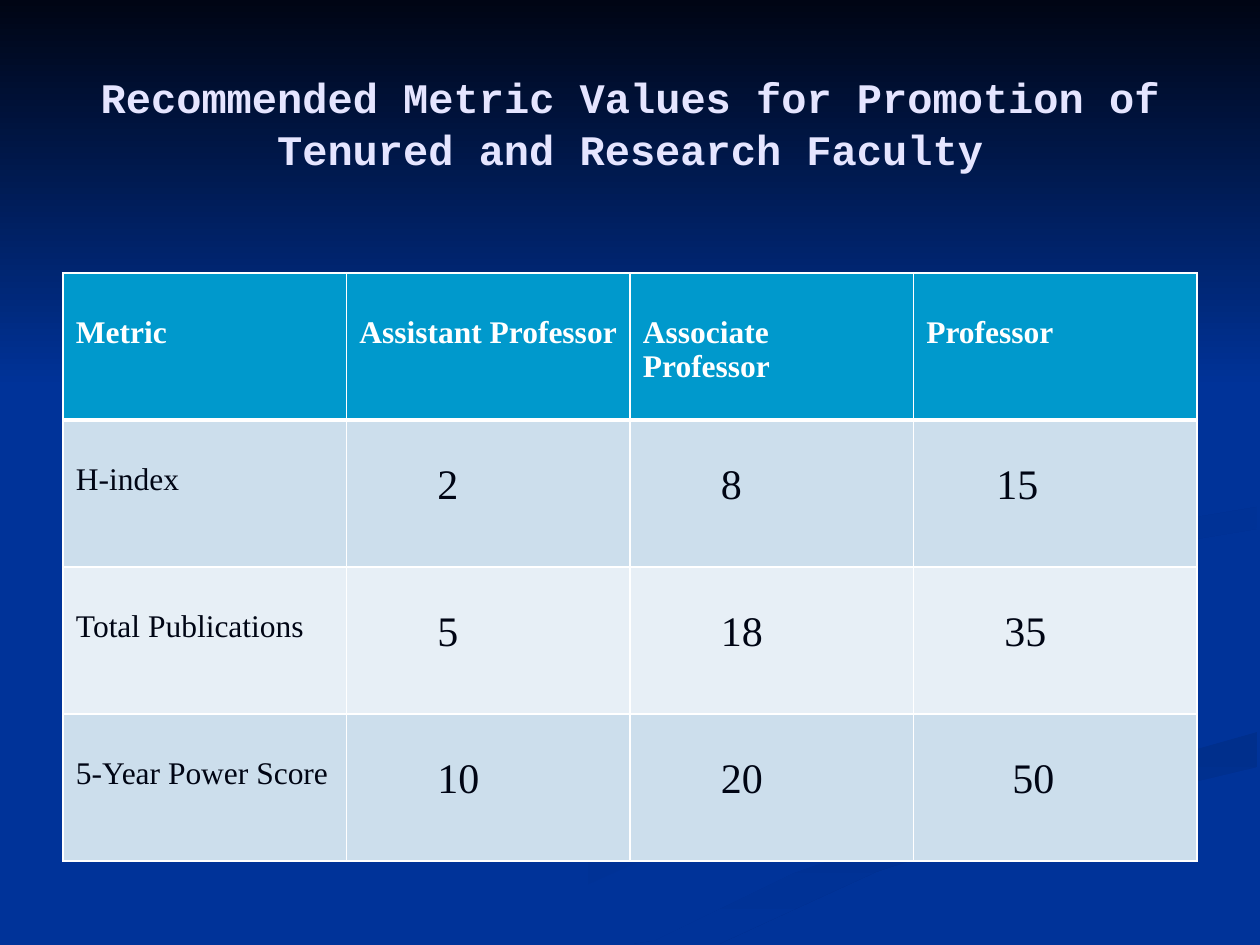
from lxml.etree import SubElement as Sub
from pptx import Presentation
from pptx.dml.color import RGBColor
from pptx.enum.text import MSO_ANCHOR as Anchor, PP_ALIGN as Align
from pptx.oxml.ns import qn
from pptx.util import Pt

PX = 914400 // 126
WIDE, HIGH = 1260, 945
WHITE, NAVY, BLUE = "FFFFFF", "000514", "003399"
TIMES = "Times New Roman"

# Curves shared by neighbouring swirls
EDGE = [(654, 941), (794, 873), (963, 815), (1257, 732)]
RIM = [(985, 580), (1071, 538), (1257, 507)]

# Backdrop, back to front: points, gradient start, gradient end, clockwise angle
SWIRLS = [
    ([(725, 578), (732, 610), (978, 697), (944, 748), (577, 849), (378, 944),
      (455, 944), (629, 866), (932, 779), (1008, 732), (939, 678),
      (740, 606)], BLUE, "003193", 0),
    ([(912, 585), (984, 653), (1143, 708), (1126, 762), (1188, 718),
      (939, 617)], BLUE, "003193", 45),
    ([(634, 944), (719, 944), (876, 872), (1034, 820), (1257, 767),
      *EDGE[::-1]], "002F8C", BLUE, 90),
    ([(914, 585), (956, 627), (1188, 718), (1148, 756), (835, 842),
      (601, 944), *EDGE, (1257, 678), (1029, 620), *RIM, (1257, 488),
      (993, 532)], BLUE, None, 0),
    ([*RIM, (1257, 529), (1082, 558), (1014, 595), (1041, 625)],
     "003091", BLUE, 45),
    ([(861, 542), (1040, 507), (1126, 433), (1089, 367), (960, 294),
      (1120, 422), (1061, 476), (788, 537), (727, 582), (784, 630),
      (748, 586)], "002F8E", BLUE, 45),
    ([(0, 0), (0, 388), (WIDE, 388), (WIDE, 0)], NAVY, BLUE, 90),
]

HEADS = ["Metric", "Assistant Professor", "Associate Professor", "Professor"]
ROWS = [["H-index", "2", "8", "15"],
        ["Total Publications", "5", "18", "35"],
        ["5-Year Power Score", "10", "20", "50"]]
# Left margins of the cells in px
LABEL, VALUE = 13, 91
SHIFTS = {"15": -8, "50": 8}


def tint(code):
    return RGBColor.from_string(code)


def paint(fill, code):
    fill.solid()
    fill.fore_color.rgb = tint(code)


def style(run, code, **form):
    for key, value in form.items():
        setattr(run.font, key, value)
    run.font.color.rgb = tint(code)


def add_swirl(slide, points, start, end, angle):
    pen = slide.shapes.build_freeform(*points[0], scale=PX)
    pen.add_line_segments(points[1:], close=True)
    shape = pen.convert_to_shape()
    shape.shadow.inherit = False
    shape.line.fill.background()
    if end is None:
        paint(shape.fill, start)
        return
    shape.fill.gradient()
    shape.fill.gradient_angle = -angle % 360
    for stop, code in zip(shape.fill.gradient_stops, (start, end)):
        stop.color.rgb = tint(code)


def add_title(slide, text):
    box = slide.shapes.add_textbox(63 * PX, 38 * PX, 1134 * PX, 157 * PX)
    frame = box.text_frame
    frame.word_wrap = True
    frame.vertical_anchor = Anchor.MIDDLE
    frame.margin_top = 16 * PX
    para = frame.paragraphs[0]
    para.alignment = Align.CENTER
    para.line_spacing = 1.05
    run = para.add_run()
    run.text = text
    style(run, "E5E5FF", name="Courier New", size=Pt(24), bold=True)


def add_edges(cell, widths):
    props = cell._tc.get_or_add_tcPr()
    for side, width in widths.items():
        line = Sub(props, qn(f"a:ln{side}"), w=str(Pt(width)))
        Sub(Sub(line, qn("a:solidFill")), qn("a:srgbClr"), val=WHITE)


def fill_cell(cell, text, row, col):
    head, value = row == 0, row > 0 and col > 0
    add_edges(cell, {"L": 1, "R": 1, "T": 3 if row == 1 else 1,
                     "B": 3 if head else 1})
    paint(cell.fill, "0099CC" if head else ("E7EFF6", "CCDEEC")[row % 2])
    cell.margin_top = 42 * PX
    cell.margin_left = (VALUE + SHIFTS.get(text, 0) if value else LABEL) * PX
    run = cell.text_frame.paragraphs[0].add_run()
    run.text = text
    style(run, WHITE if head else NAVY, name=TIMES,
          size=Pt(24 if value else 18), bold=head)


def add_grid(slide, rows):
    frame = slide.shapes.add_table(len(rows), len(rows[0]), 63 * PX, 273 * PX,
                                   1134 * PX, 588 * PX)
    for r, texts in enumerate(rows):
        for c, text in enumerate(texts):
            fill_cell(frame.table.cell(r, c), text, r, c)


def main():
    deck = Presentation()
    deck.slide_width, deck.slide_height = WIDE * PX, HIGH * PX
    slide = deck.slides.add_slide(deck.slide_layouts[6])
    # Backdrop
    paint(slide.background.fill, BLUE)
    for swirl in SWIRLS:
        add_swirl(slide, *swirl)
    # Content
    add_title(slide, "Recommended Metric Values for Promotion of "
                     "Tenured and Research Faculty")
    add_grid(slide, [HEADS, *ROWS])
    deck.save("out.pptx")


if __name__ == "__main__":
    main()
